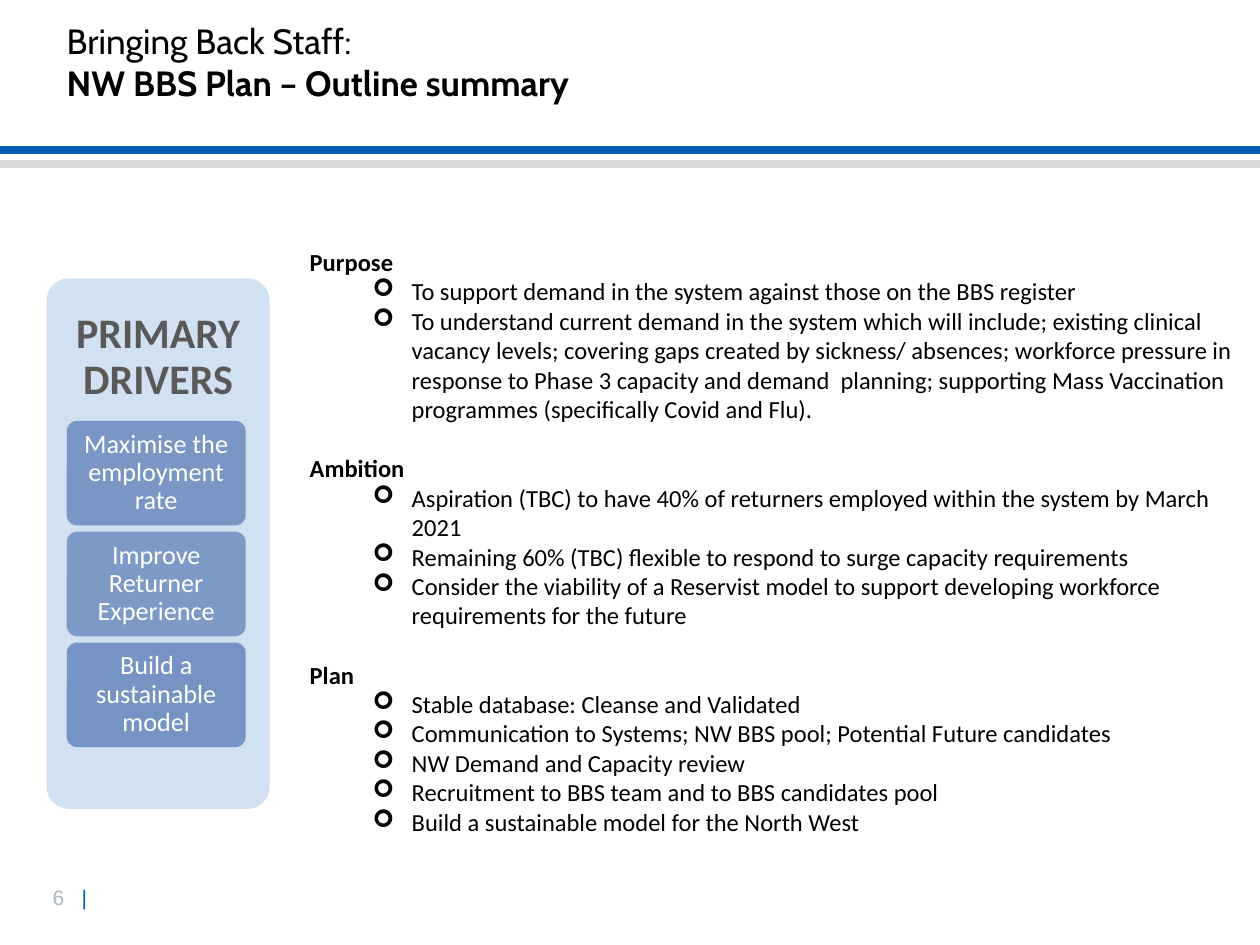
"""Build the Bringing Back Staff outline summary slide."""
from lxml import etree
from pptx import Presentation
from pptx.dml.color import RGBColor
from pptx.enum.shapes import MSO_CONNECTOR, MSO_SHAPE
from pptx.enum.text import MSO_ANCHOR, PP_ALIGN
from pptx.oxml.ns import qn
from pptx.util import Inches, Pt

STRAIGHT = MSO_CONNECTOR.STRAIGHT
ROUNDED = MSO_SHAPE.ROUNDED_RECTANGLE
MIDDLE, BOTTOM = MSO_ANCHOR.MIDDLE, MSO_ANCHOR.BOTTOM
CENTER = PP_ALIGN.CENTER

BLACK = RGBColor(0x00, 0x00, 0x00)
WHITE = RGBColor(0xFF, 0xFF, 0xFF)
BLUE = RGBColor(0x00, 0x5E, 0xB8)
NAVY = RGBColor(0x00, 0x30, 0x87)
RULE_GRAY = RGBColor(0xD9, 0xD9, 0xD9)
NUMBER_GRAY = RGBColor(0xAD, 0xB6, 0xBE)
DARK_GRAY = RGBColor(0x59, 0x59, 0x59)

SECTIONS = {
    "Purpose": [
        "To support demand in the system against those on the BBS register",
        "To understand current demand in the system which will include; existing clinical "
        "vacancy levels; covering gaps created by sickness/ absences; workforce pressure in "
        "response to Phase 3 capacity and demand  planning; supporting Mass Vaccination "
        "programmes (specifically Covid and Flu).",
    ],
    "Ambition": [
        "Aspiration (TBC) to have 40% of returners employed within the system by March 2021",
        "Remaining 60% (TBC) flexible to respond to surge capacity requirements",
        "Consider the viability of a Reservist model to support developing workforce "
        "requirements for the future",
    ],
    "Plan": [
        "Stable database: Cleanse and Validated",
        "Communication to Systems; NW BBS pool; Potential Future candidates",
        "NW Demand and Capacity review",
        "Recruitment to BBS team and to BBS candidates pool",
        "Build a sustainable model for the North West",
    ],
}
DRIVERS = [
    ("Maximise the employment rate", 42),
    ("Improve Returner Experience", 40),
    ("Build a sustainable model", 43),
]


def add_run(paragraph, text, size=14, color=BLACK, font="Calibri", bold=False):
    run = paragraph.add_run()
    run.text = text
    run.font.size = Pt(size)
    run.font.color.rgb = color
    run.font.name = font
    run.font.bold = bold


def add_card(left, top, width, height, color, opacity, margins):
    card = slide.shapes.add_shape(
        ROUNDED, Inches(left), Inches(top), Inches(width), Inches(height))
    card.shadow.inherit = False
    card.adjustments[0] = 0.1
    card.fill.solid()
    card.fill.fore_color.rgb = color
    fill_color = card.fill._xPr.find(qn("a:solidFill"))[0]
    etree.SubElement(fill_color, qn("a:alpha"), val=str(opacity * 1000))
    card.line.fill.background()
    frame = card.text_frame
    frame.word_wrap = True
    frame.vertical_anchor = MIDDLE
    frame.margin_left, frame.margin_top, frame.margin_right, frame.margin_bottom = (
        Inches(margin) for margin in margins)
    paragraph = frame.paragraphs[0]
    paragraph.alignment = CENTER
    paragraph.line_spacing = 0.9
    return paragraph


presentation = Presentation()
presentation.slide_width = Inches(10)
presentation.slide_height = Inches(7.5)
slide = presentation.slides.add_slide(presentation.slide_layouts[6])

number_box = slide.shapes.add_textbox(Inches(0.32), Inches(6.97), Inches(0.71), Inches(0.3))
paragraph = number_box.text_frame.paragraphs[0]
tabs = etree.SubElement(paragraph._p.get_or_add_pPr(), qn("a:tabLst"))
etree.SubElement(tabs, qn("a:tab"), pos=str(Inches(0.23)), algn="l")
add_run(paragraph, "6\t", size=12, color=NUMBER_GRAY, font="Arial")
add_run(paragraph, "|", size=12, color=BLUE, font="Arial")

for top, color in [(1.19, BLUE), (1.3, RULE_GRAY)]:
    rule = slide.shapes.add_connector(
        STRAIGHT, Inches(-0.01), Inches(top), Inches(10), Inches(top))
    rule.line.color.rgb = color
    rule.line.width = Pt(4.5)
    etree.SubElement(rule._element.spPr, qn("a:effectLst"))

title_box = slide.shapes.add_textbox(Inches(0.53), Inches(0.13), Inches(8.07), Inches(0.74))
title_frame = title_box.text_frame
title_frame.word_wrap = True
title_frame.vertical_anchor = BOTTOM
title_frame.margin_left = title_frame.margin_right = 0
add_run(title_frame.paragraphs[0], "Bringing Back Staff:", size=20, font="Cabin")
add_run(title_frame.add_paragraph(), "NW BBS Plan – Outline summary",
        size=20, font="Cabin", bold=True)

body_box = slide.shapes.add_textbox(Inches(2.36), Inches(1.19), Inches(7.63), Inches(5.79))
body_frame = body_box.text_frame
body_frame.word_wrap = True
body_frame.margin_top = Inches(0.77)
for index, (heading, points) in enumerate(SECTIONS.items()):
    if index == 0:
        paragraph = body_frame.paragraphs[0]
    else:
        paragraph = body_frame.add_paragraph()
        paragraph.space_before = Pt(17)
    add_run(paragraph, heading, bold=True)
    for point in points:
        paragraph = body_frame.add_paragraph()
        paragraph.level = 1
        properties = paragraph._p.get_or_add_pPr()
        properties.set("marL", str(Inches(0.81)))
        properties.set("indent", str(Inches(-0.31)))
        etree.SubElement(properties, qn("a:buFont"), typeface="Wingdings")
        etree.SubElement(properties, qn("a:buChar"), char="➢")
        add_run(paragraph, point)

panel_text = add_card(0.37, 2.21, 1.77, 4.21, BLUE, 18, (0.1, 0.1, 0.1, 3.05))
add_run(panel_text, "PRIMARY DRIVERS", size=24, color=DARK_GRAY, bold=True)
for row, (driver, opacity) in enumerate(DRIVERS):
    driver_text = add_card(
        0.53, 3.34 + row * 0.88, 1.42, 0.83, NAVY, opacity, (0.04, 0.03, 0.04, 0.03))
    add_run(driver_text, driver, size=15, color=WHITE)

presentation.save("out.pptx")
